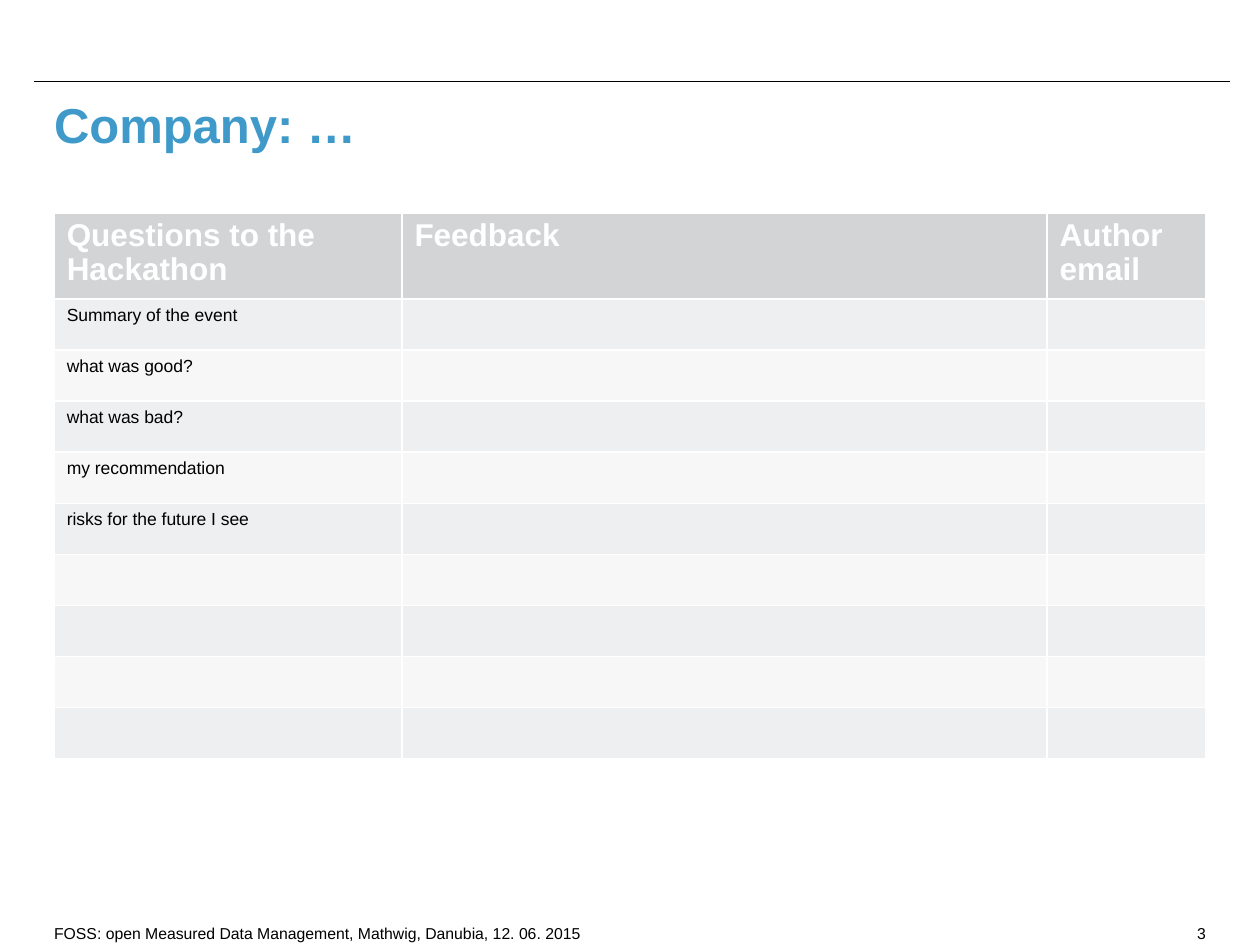
from dataclasses import dataclass

import pptx
import pptx.dml.color
import pptx.enum.shapes
import pptx.enum.text
import pptx.oxml
import pptx.oxml.ns
import pptx.util
from pptx.util import Inches

RGB = pptx.dml.color.RGBColor
ALIGN = pptx.enum.text.PP_ALIGN
ANCHOR = pptx.enum.text.MSO_ANCHOR


@dataclass(frozen=True)
class Theme:
    font: str = "Arial"
    title_color: RGB = RGB(0x3F, 0x9A, 0xC9)
    ink: RGB = RGB(0, 0, 0)
    white: RGB = RGB(0xFF, 0xFF, 0xFF)
    header_fill: RGB = RGB(0xD2, 0xD4, 0xD6)
    band_fills: tuple = (RGB(0xEE, 0xEF, 0xF0), RGB(0xF7, 0xF7, 0xF7))
    title_size: int = 28
    header_size: int = 18
    body_size: int = 10
    footer_size: int = 9


THEME = Theme()
HEADINGS = ("Questions to the Hackathon", "Feedback", "Author email")
QUESTIONS = ("Summary of the event", "what was good?", "what was bad?",
             "my recommendation", "risks for the future I see")
COLUMN_WIDTHS = (2.76, 5.12, 1.26)
BODY_ROWS = 9
HEADER_HEIGHT = 0.65


def write(frame, text, size, color=THEME.ink, bold=False, align=ALIGN.LEFT,
          line_spacing=None):
    paragraph = frame.paragraphs[0]
    paragraph.alignment = align
    paragraph.line_spacing = line_spacing
    run = paragraph.add_run()
    run.text = text
    font = run.font
    font.name, font.size, font.bold = THEME.font, pptx.util.Pt(size), bold
    font.color.rgb = color


def add_text(slide, box, text, size, anchor=ANCHOR.TOP, wrap=True, **text_format):
    frame = slide.shapes.add_textbox(*map(Inches, box)).text_frame
    frame.word_wrap = wrap
    frame.vertical_anchor = anchor
    frame.margin_left = frame.margin_right = 0
    frame.margin_top = frame.margin_bottom = 0
    write(frame, text, size, **text_format)


def add_heading(slide, left, top, width, height):
    # Rule across the top, reaching beyond the title on both sides
    rule_y = Inches(top - 0.15)
    rule = slide.shapes.add_connector(
        pptx.enum.shapes.MSO_CONNECTOR.STRAIGHT,
        Inches(left - 0.16), rule_y, Inches(left + width + 0.19), rule_y)
    rule.line.color.rgb = THEME.ink
    rule.line.width = pptx.util.Pt(0.5)
    rule._element.spPr.append(pptx.oxml.parse_xml(
        f"<a:effectLst {pptx.oxml.ns.nsdecls('a')}/>"))

    # Title
    add_text(slide, (left, top, width, height), "Company: …", THEME.title_size,
             color=THEME.title_color, bold=True, line_spacing=pptx.util.Pt(30))


def add_feedback_table(slide, left, top, width, height):
    # The default table style supplies the white cell borders
    table = slide.shapes.add_table(
        BODY_ROWS + 1, len(HEADINGS),
        *map(Inches, (left, top, width, height))).table
    for column, share in zip(table.columns, COLUMN_WIDTHS):
        column.width = Inches(width * share / sum(COLUMN_WIDTHS))
    for row in table.rows:
        row.height = Inches((height - HEADER_HEIGHT) / BODY_ROWS)
    table.rows[0].height = Inches(HEADER_HEIGHT)

    # Header and alternating row fills
    for index, row in enumerate(table.rows):
        for cell in row.cells:
            cell.fill.solid()
            cell.fill.fore_color.rgb = (
                THEME.band_fills[(index - 1) % 2] if index else THEME.header_fill)

    # Wording
    for column, heading in enumerate(HEADINGS):
        write(table.cell(0, column).text_frame, heading, THEME.header_size,
              color=THEME.white, bold=True, line_spacing=0.97)
    for row, question in enumerate(QUESTIONS, start=1):
        write(table.cell(row, 0).text_frame, question, THEME.body_size)


def add_footer(slide, left, top, width, height):
    number_width = 1.96
    add_text(slide, (left, top, width / 2, height),
             "FOSS: open Measured Data Management, Mathwig, Danubia, 12. 06. 2015",
             THEME.footer_size, anchor=ANCHOR.MIDDLE, wrap=False, line_spacing=0.9)
    add_text(slide, (left + width - number_width, top, number_width, height), "3",
             THEME.footer_size, anchor=ANCHOR.MIDDLE, align=ALIGN.RIGHT,
             line_spacing=0.9)


def main():
    deck = pptx.Presentation()
    deck.slide_width, deck.slide_height = Inches(10), Inches(7.5)
    slide = deck.slides.add_slide(deck.slide_layouts[6])
    left, width = 0.43, 9.14
    add_heading(slide, left, 0.8, width, 0.9)
    add_feedback_table(slide, left, 1.69, width, 4.3)
    add_footer(slide, left, 7.33, width, 0.17)
    deck.save("out.pptx")


if __name__ == "__main__":
    main()
